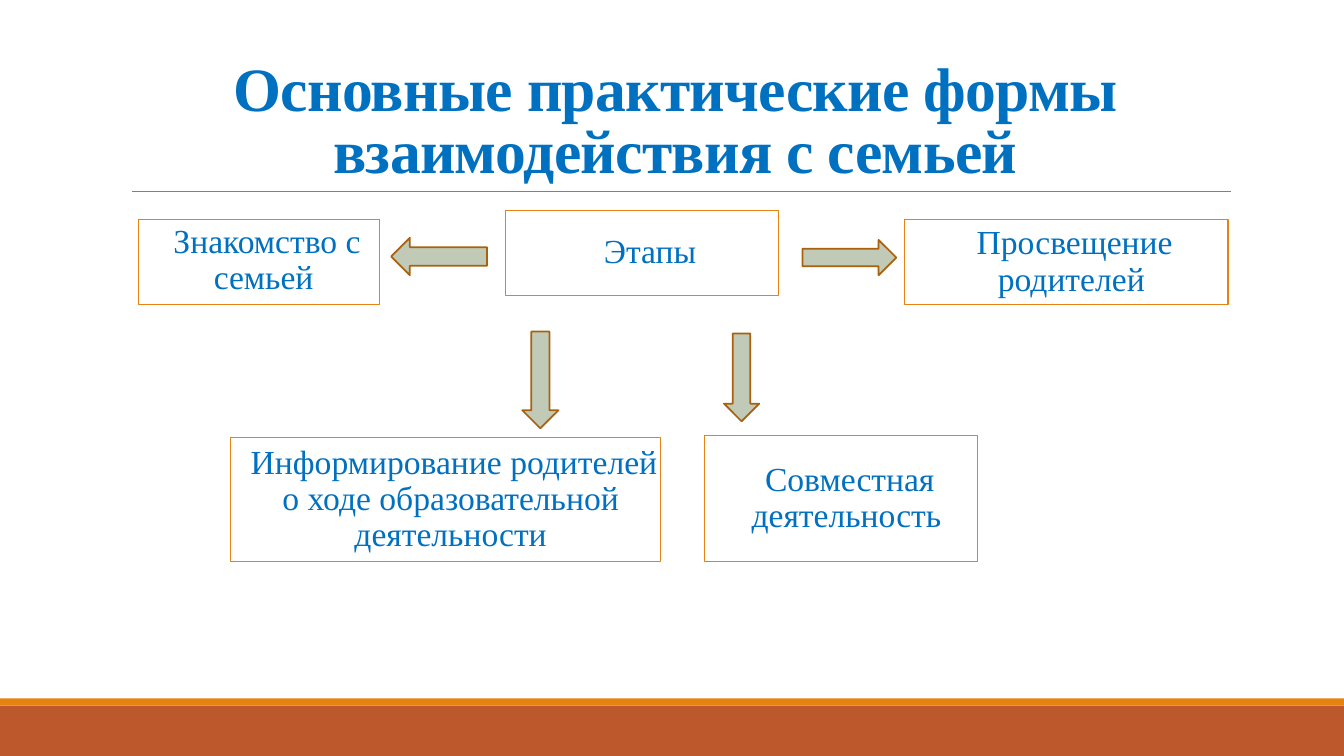
"""Build a slide showing the stages of working with a family as boxes and arrows."""
import pptx
import pptx.dml.color
import pptx.enum.shapes
import pptx.enum.text
import pptx.oxml.ns
import pptx.util
from lxml import etree

Inches, Pt = pptx.util.Inches, pptx.util.Pt
SHAPE = pptx.enum.shapes.MSO_SHAPE
ANCHOR = pptx.enum.text.MSO_ANCHOR
qn = pptx.oxml.ns.qn

THEME = {
    "font": "Times New Roman", "title_size": 44, "box_size": 24,
    "text": "0070C0", "accent": "E48312", "footer": "BD582C", "rule": "808080",
    "arrow": "C1CAB6", "arrow_line": "A9610D",
}

TITLE = ("Основные практические формы взаимодействия с семьей", (1.2, 0.31, 11, 1.59))
BANDS = [("footer", (0, 7, 13.33, 0.5)), ("accent", (0, 6.93, 13.33, 0.07))]
RULE = (1.31, 1.9, 12.21, 1.9)
BOXES = [
    ("Этапы", (5.01, 2.09, 2.71, 0.84), ANCHOR.MIDDLE),
    ("Знакомство с семьей", (1.37, 2.18, 2.39, 0.84), ANCHOR.TOP),
    ("Информирование родителей о ходе образовательной деятельности",
     (2.29, 4.34, 4.26, 1.23), ANCHOR.MIDDLE),
    ("Просвещение родителей", (8.97, 2.18, 3.21, 0.84), ANCHOR.MIDDLE),
    ("Совместная деятельность", (6.99, 4.32, 2.71, 1.25), ANCHOR.MIDDLE),
]
ARROWS = [
    (SHAPE.LEFT_ARROW, (3.88, 2.36, 0.95, 0.37)),
    (SHAPE.RIGHT_ARROW, (7.96, 2.38, 0.93, 0.35)),
    (SHAPE.DOWN_ARROW, (5.18, 3.29, 0.36, 0.96)),
    (SHAPE.DOWN_ARROW, (7.18, 3.31, 0.35, 0.87)),
]


def color(name):
    return pptx.dml.color.RGBColor.from_string(THEME[name])


def add_shape(slide, kind, at, fill=None, line=None, width=0.75):
    sp = slide.shapes.add_shape(kind, *map(Inches, at))
    sp.shadow.inherit = False
    if fill:
        sp.fill.solid()
        sp.fill.fore_color.rgb = color(fill)
    else:
        sp.fill.background()
    if line:
        sp.line.color.rgb = color(line)
        sp.line.width = Pt(width)
    else:
        sp.line.fill.background()
    return sp


def write(sp, text, size, anchor, bold=False, line_spacing=0.9, tracking=None, hanging=False):
    tf = sp.text_frame
    tf.word_wrap = True
    tf.vertical_anchor = anchor
    p = tf.paragraphs[0]
    p.alignment = pptx.enum.text.PP_ALIGN.CENTER
    p.line_spacing = line_spacing
    r = p.add_run()
    r.text = text
    r.font.name = THEME["font"]
    r.font.size = Pt(THEME[size])
    r.font.bold = bold
    r.font.color.rgb = color("text")
    if tracking:
        r.font._element.set("spc", str(int(tracking * 100)))
    if hanging:
        tf.margin_left = tf.margin_right = 0
        p.space_before, p.space_after = Pt(12), Pt(2)
        pPr = p._p.get_or_add_pPr()
        pPr.set("marL", str(Inches(0.1)))
        pPr.set("indent", str(-Inches(0.1)))
        etree.SubElement(pPr, qn("a:buChar")).set("char", " ")


def main():
    prs = pptx.Presentation()
    prs.slide_width, prs.slide_height = Inches(13.33), Inches(7.5)
    slide = prs.slides.add_slide(prs.slide_layouts[6])

    for fill, at in BANDS:
        add_shape(slide, SHAPE.RECTANGLE, at, fill=fill)

    rule = slide.shapes.add_connector(
        pptx.enum.shapes.MSO_CONNECTOR.STRAIGHT, *map(Inches, RULE))
    rule.line.color.rgb = color("rule")
    rule.line.width = Pt(0.5)
    etree.SubElement(rule._element.spPr, qn("a:effectLst"))

    text, at = TITLE
    title = slide.shapes.add_textbox(*map(Inches, at))
    write(title, text, "title_size", ANCHOR.BOTTOM, bold=True, line_spacing=0.85, tracking=-0.5)

    for text, at, anchor in BOXES:
        box = add_shape(slide, SHAPE.RECTANGLE, at, line="accent")
        write(box, text, "box_size", anchor, hanging=True)

    for kind, at in ARROWS:
        add_shape(slide, kind, at, fill="arrow", line="arrow_line", width=1.25)

    prs.save("out.pptx")


if __name__ == "__main__":
    main()
